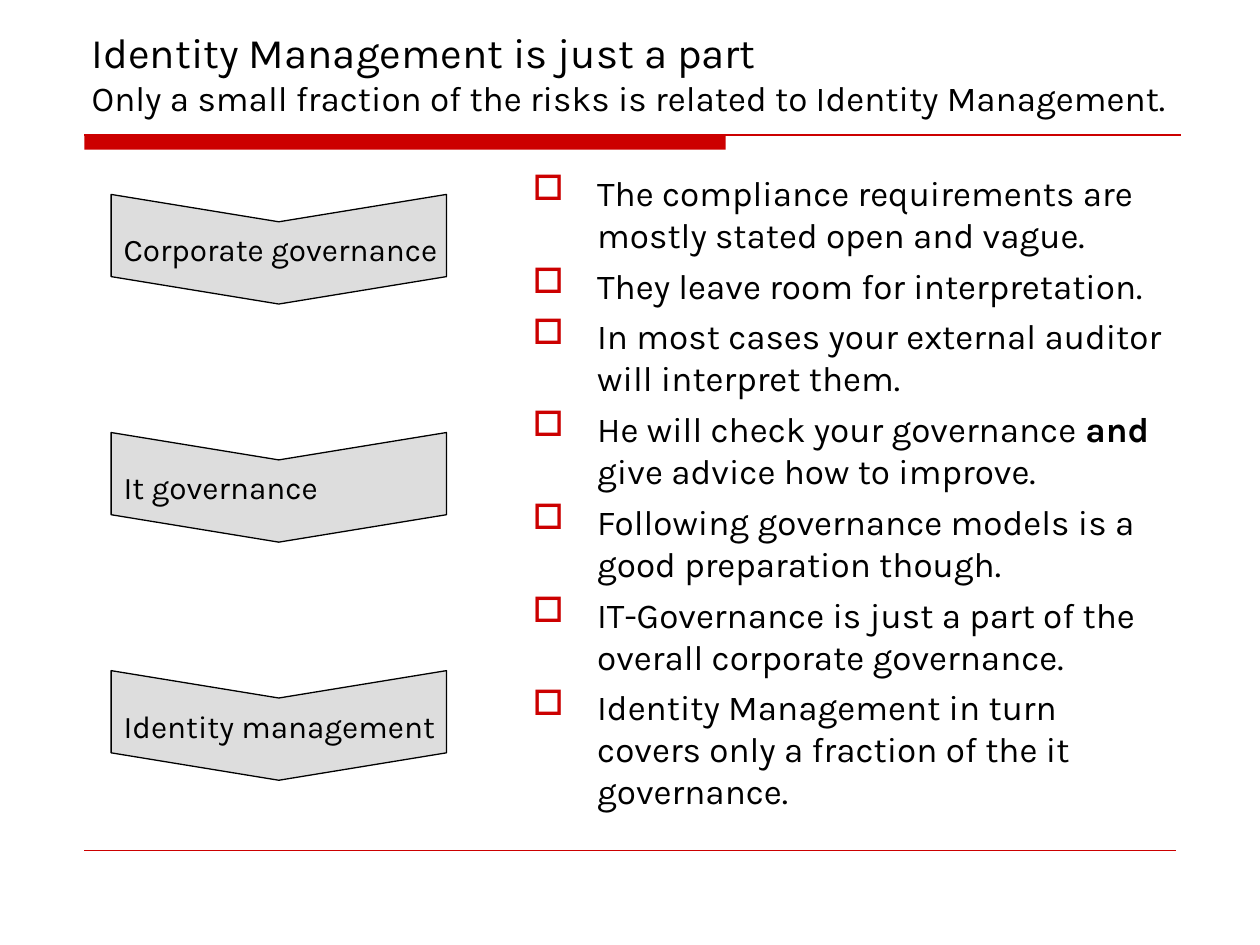
from pptx import Presentation
from pptx.dml.color import RGBColor
from pptx.enum.shapes import MSO_CONNECTOR, MSO_SHAPE
from pptx.enum.text import MSO_ANCHOR, PP_ALIGN
from pptx.oxml.ns import qn
from pptx.util import Cm, Pt
from lxml.etree import SubElement

FONT = "Karla"
RED, GREY, BLACK = "CC0000", "DDDDDD", "000000"

TITLE = "Identity Management is just a part"
SUB = "Only a small fraction of the risks is related to Identity Management."
LEVELS = ["Corporate governance", "It governance", "Identity management"]
POINTS = [
    "The compliance requirements are mostly stated open and vague.",
    "They leave room for interpretation.",
    "In most cases your external auditor will interpret them.",
    "He will check your governance *and* give advice how to improve.",
    "Following governance models is a good preparation though.",
    "IT-Governance is just a part of the overall corporate governance.",
    "Identity Management in turn covers only a fraction of the it governance.",
]


def color(code):
    return RGBColor.from_string(code)


def style(font, size):
    font.name = FONT
    font.size = Pt(size)
    font.color.rgb = color(BLACK)


def add_rule(slide, x, y, w, weight):
    rule = slide.shapes.add_connector(
        MSO_CONNECTOR.STRAIGHT, Cm(x), Cm(y), Cm(x + w), Cm(y))
    rule.line.color.rgb = color(RED)
    rule.line.width = Pt(weight)
    SubElement(rule._element.spPr, qn("a:effectLst"))


def add_shape(slide, kind, x, y, w, h, fill):
    shape = slide.shapes.add_shape(kind, Cm(x), Cm(y), Cm(w), Cm(h))
    shape.shadow.inherit = False
    shape.fill.solid()
    shape.fill.fore_color.rgb = color(fill)
    return shape


def add_text(slide, x, y, w, h):
    frame = slide.shapes.add_textbox(Cm(x), Cm(y), Cm(w), Cm(h)).text_frame
    frame.word_wrap = True
    return frame


def add_head(slide, x, y, w, h):
    # Title and subtitle share one paragraph
    frame = add_text(slide, x, y, w, h)
    frame.vertical_anchor = MSO_ANCHOR.BOTTOM
    para = frame.paragraphs[0]
    for text, size in ((TITLE, 24), (SUB, 20)):
        if para.runs:
            para.add_line_break()
        run = para.add_run()
        run.text = text
        style(run.font, size)


def add_bar(slide, x, y, w, h):
    # Thick bar under the first part of a thin rule
    bar = add_shape(slide, MSO_SHAPE.RECTANGLE, x, y, w * 0.585, h, RED)
    bar.line.fill.background()
    add_rule(slide, x, y, w, 0.75)


def add_levels(slide, x, y, w, h, step):
    # Chevrons are turned to point down, their text is turned back
    for i, text in enumerate(LEVELS):
        left, top = x + (w - h) / 2, y + i * step + (h - w) / 2
        shape = add_shape(slide, MSO_SHAPE.CHEVRON, left, top, h, w, GREY)
        shape.rotation = 90
        shape.adjustments[0] = 0.25
        shape.line.color.rgb = color(BLACK)
        shape.line.width = Pt(0.75)
        frame = shape.text_frame
        frame.word_wrap = True
        frame.vertical_anchor = MSO_ANCHOR.MIDDLE
        frame.margin_left = frame.margin_right = frame.margin_top = 0
        frame.margin_bottom = Cm(0.25)
        frame._txBody.bodyPr.set("vert", "vert270")
        para = frame.paragraphs[0]
        para.text = text
        para.alignment = PP_ALIGN.LEFT
        style(para.font, 18)


def add_bullet(para, indent):
    props = para._p.get_or_add_pPr()
    props.set("marL", str(Cm(indent)))
    props.set("indent", str(-Cm(indent)))
    tint = SubElement(props, qn("a:buClr"))
    SubElement(tint, qn("a:srgbClr"), val=RED)
    SubElement(props, qn("a:buChar"), char="□")


def add_points(slide, x, y, w, h):
    frame = add_text(slide, x, y, w, h)
    for i, text in enumerate(POINTS):
        para = frame.add_paragraph() if i else frame.paragraphs[0]
        add_bullet(para, 1.3)
        if i:
            para.space_before = Pt(5)
        style(para.font, 20)
        # Words between asterisks are bold
        for j, part in enumerate(text.split("*")):
            run = para.add_run()
            run.text = part
            if j % 2:
                run.font.bold = True


def main():
    deck = Presentation()
    deck.slide_width, deck.slide_height = Cm(25.4), Cm(19.05)
    slide = deck.slides.add_slide(deck.slide_layouts[6])
    add_bar(slide, 1.7, 2.72, 22.1, 0.3)
    add_rule(slide, 1.7, 17.15, 22, 0.25)
    add_head(slide, 1.6, 0.84, 22.23, 1.68)
    add_points(slide, 10.49, 3.33, 13.31, 13.39)
    add_levels(slide, 2.24, 3.92, 6.76, 2.21, 4.8)
    deck.save("out.pptx")


if __name__ == "__main__":
    main()
